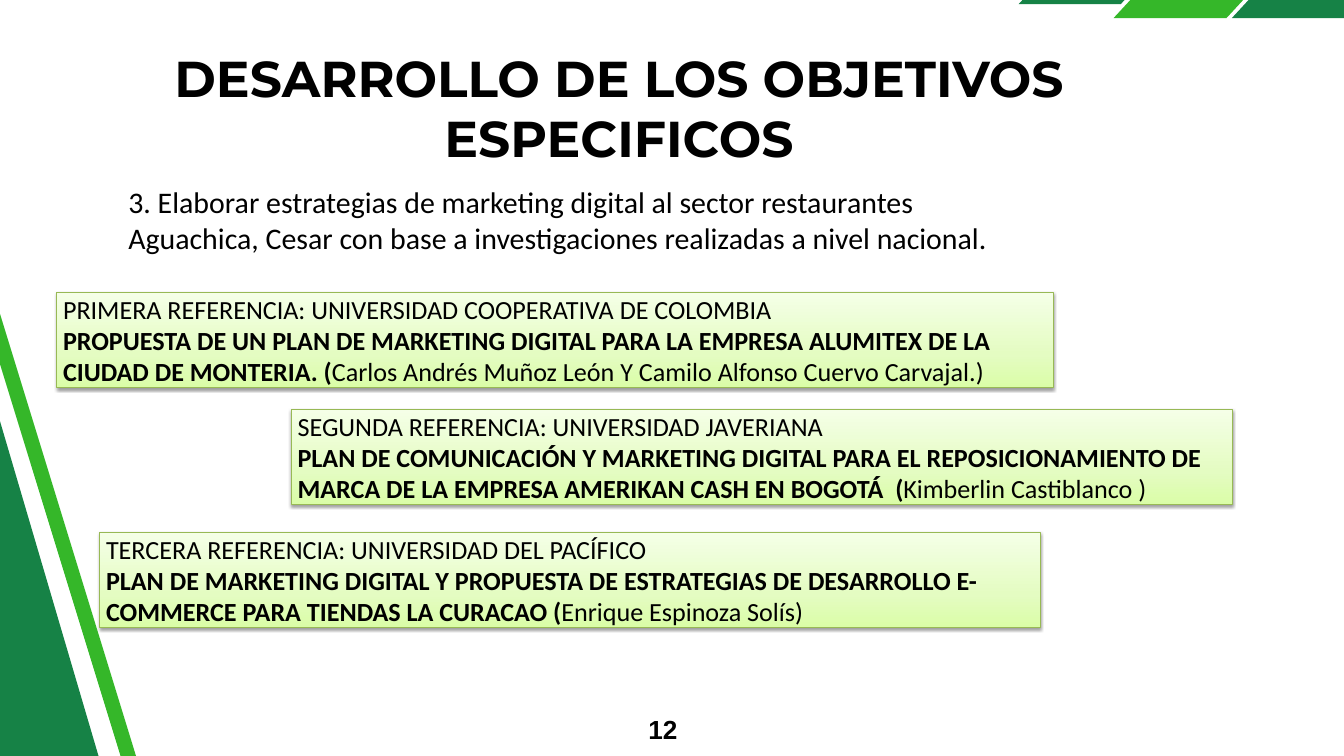
from copy import deepcopy
from pptx import Presentation
from pptx.dml.color import RGBColor
from pptx.enum.shapes import MSO_SHAPE as Shape
from pptx.enum.text import MSO_ANCHOR as Anchor, PP_ALIGN as Align
from pptx.oxml import parse_xml
from pptx.oxml.ns import nsdecls, qn
from pptx.util import Inches, Pt

BLACK = RGBColor(0x00, 0x00, 0x00)
WHITE = RGBColor(0xFF, 0xFF, 0xFF)
DARK = RGBColor(0x16, 0x82, 0x46)
GREEN = RGBColor(0x35, 0xB7, 0x29)
EDGE = RGBColor(0x98, 0xB9, 0x55)
STOPS = [
    (0, RGBColor(0xDA, 0xFD, 0xA7)),
    (0.35, RGBColor(0xE4, 0xFC, 0xC2)),
    (1, RGBColor(0xF5, 0xFF, 0xE7)),
]
SHADOW = (
    f'<a:outerShdw {nsdecls("a")} blurRad="40000" dist="20000" dir="5400000" '
    'rotWithShape="0"><a:srgbClr val="000000"><a:alpha val="38000"/>'
    '</a:srgbClr></a:outerShdw>'
)

BANDS = [
    (DARK, (15.16, -0.86, 2.37, 0.92), 0.85, 0),
    (GREEN, (16.57, -1.06, 2.91, 1.33), 1.23, 0),
    (DARK, (18.33, -1.06, 2.91, 1.33), 1.23, 0),
    (DARK, (-10.09, 6.23, 16.41, 5.01), 0, 253.6),
    (GREEN, (-7.08, 8.59, 16.41, 0.22), 0, 252.9),
]
CARDS = [
    ((0.84, 4.35, 14.83, 1.42),
     "PRIMERA REFERENCIA: UNIVERSIDAD COOPERATIVA DE COLOMBIA",
     "PROPUESTA DE UN PLAN DE MARKETING DIGITAL PARA LA EMPRESA ALUMITEX "
     "DE LA CIUDAD DE MONTERIA. (",
     "Carlos Andrés Muñoz León Y Camilo Alfonso Cuervo Carvajal.)"),
    ((4.33, 6.09, 14.01, 1.42),
     "SEGUNDA REFERENCIA: UNIVERSIDAD JAVERIANA",
     "PLAN DE COMUNICACIÓN Y MARKETING DIGITAL PARA EL REPOSICIONAMIENTO "
     "DE MARCA DE LA EMPRESA AMERIKAN CASH EN BOGOTÁ  (",
     "Kimberlin Castiblanco )"),
    ((1.48, 7.92, 14, 1.42),
     "TERCERA REFERENCIA: UNIVERSIDAD DEL PACÍFICO",
     "PLAN DE MARKETING DIGITAL Y PROPUESTA DE ESTRATEGIAS DE DESARROLLO "
     "E-COMMERCE PARA TIENDAS LA CURACAO (",
     "Enrique Espinoza Solís)"),
]


class Deck:
    def __init__(self, slide):
        self.slide = slide
        self.shapes = slide.shapes
        self.face = "Calibri"

    def style(self, para, size, face=None, bold=None):
        font = para.font
        font.name = face or self.face
        font.size = Pt(size)
        font.bold = bold
        font.color.rgb = BLACK

    def band(self, color, box, slant, turn):
        x, y, wide, high = box
        points = [(x + slant, y), (x + wide, y),
                  (x + wide - slant, y + high), (x, y + high)]
        spots = [(Inches(a), Inches(b)) for a, b in points]
        pen = self.shapes.build_freeform(*spots[0])
        pen.add_line_segments(spots[1:], close=True)
        shape = pen.convert_to_shape()
        shape.rotation = turn
        shape.fill.solid()
        shape.fill.fore_color.rgb = color
        shape.line.fill.background()
        shape.shadow.inherit = False

    def text(self, box, words, size, face=None, bold=None, align=Align.LEFT, space=None):
        frame = self.shapes.add_textbox(*map(Inches, box)).text_frame
        frame.word_wrap = True
        frame.margin_left = frame.margin_right = 0
        frame.margin_top = frame.margin_bottom = 0
        para = frame.paragraphs[0]
        para.text = words
        para.alignment = align
        para.line_spacing = space
        self.style(para, size, face, bold)

    def card(self, box, head, title, author):
        shape = self.shapes.add_shape(Shape.RECTANGLE, *map(Inches, box))
        props = shape._element.spPr
        fill = shape.fill
        fill.gradient()
        fill.gradient_angle = 90
        stops = props.find(".//" + qn("a:gsLst"))
        stops.append(deepcopy(stops[0]))
        for stop, (place, color) in zip(fill.gradient_stops, STOPS):
            stop.position = place
            stop.color.rgb = color
        shape.line.color.rgb = EDGE
        shape.line.width = Pt(0.75)
        shape.shadow.inherit = False
        props.find(qn("a:effectLst")).append(parse_xml(SHADOW))
        frame = shape.text_frame
        frame.word_wrap = True
        frame.vertical_anchor = Anchor.MIDDLE
        para = frame.paragraphs[0]
        para.alignment = Align.LEFT
        para.add_run().text = head
        para.add_line_break()
        run = para.add_run()
        run.text = title
        run.font.bold = True
        para.add_run().text = author
        self.style(para, 28)


def main():
    show = Presentation()
    show.slide_width = Inches(20)
    show.slide_height = Inches(11.25)
    slide = show.slides.add_slide(show.slide_layouts[6])
    slide.background.fill.solid()
    slide.background.fill.fore_color.rgb = WHITE
    deck = Deck(slide)
    for band in BANDS:
        deck.band(*band)
    deck.text((2.25, 0.7, 13.92, 1.82), "DESARROLLO DE LOS OBJETIVOS ESPECIFICOS",
              54, "Montserrat", True, Align.CENTER)
    deck.text((9.52, 10.54, 0.56, 0.5), "12", 28, "Arial", True, Align.RIGHT, Pt(39.2))
    deck.text((1.91, 2.73, 13.12, 1.62),
              "3. Elaborar estrategias de marketing digital al sector restaurantes "
              "Aguachica, Cesar con base a investigaciones realizadas a nivel nacional.", 32)
    for card in CARDS:
        deck.card(*card)
    show.save("out.pptx")


if __name__ == "__main__":
    main()
